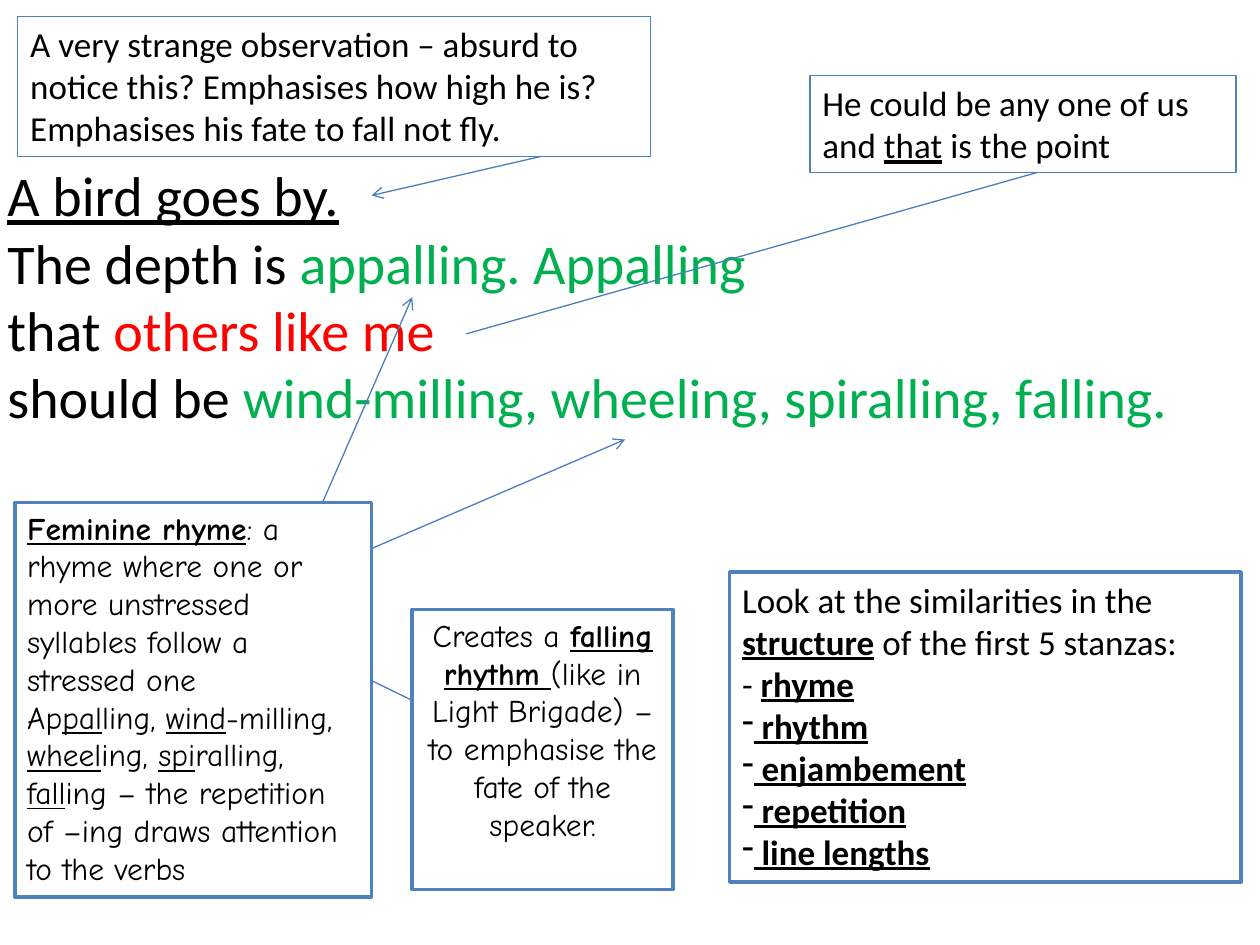
from lxml import etree
from pptx import Presentation
from pptx.dml.color import RGBColor
from pptx.enum.shapes import MSO_CONNECTOR, MSO_SHAPE
from pptx.enum.text import MSO_ANCHOR, PP_ALIGN
from pptx.oxml.ns import qn
from pptx.util import Cm, Pt

STRAIGHT = MSO_CONNECTOR.STRAIGHT
RECTANGLE = MSO_SHAPE.RECTANGLE
TOP = MSO_ANCHOR.TOP
LEFT, CENTER = PP_ALIGN.LEFT, PP_ALIGN.CENTER

BLACK = RGBColor(0x00, 0x00, 0x00)
WHITE = RGBColor(0xFF, 0xFF, 0xFF)
GREEN = RGBColor(0x00, 0xB0, 0x50)
RED = RGBColor(0xFF, 0x00, 0x00)
BORDER = RGBColor(0x4F, 0x81, 0xBD)
LEADER = RGBColor(0x4B, 0x7E, 0xBC)

PLAIN, UNDER, STRONG = "", "u", "bu"


def write(frame, paragraphs, font, size, align=LEFT):
    """Fill a text frame from lists of (text, style, optional colour) runs."""
    frame.word_wrap = True
    frame.vertical_anchor = TOP
    for index, runs in enumerate(paragraphs):
        para = frame.paragraphs[0] if index == 0 else frame.add_paragraph()
        para.alignment = align
        for text, style, *colour in runs:
            span = para.add_run()
            span.text = text
            span.font.name = font
            span.font.size = Pt(size)
            span.font.bold = "b" in style
            span.font.underline = "u" in style
            span.font.color.rgb = colour[0] if colour else BLACK


def add_dash(para):
    """Give a paragraph a dash as its bullet."""
    properties = para._p.get_or_add_pPr()
    properties.set("marL", "0")
    properties.set("indent", "0")
    etree.SubElement(properties, qn("a:buChar")).set("char", "-")


def add_leader(page, box, start, end, arrow=True):
    """Draw a leader line between two offsets from the corner of a box."""
    left, top = box[:2]
    line = page.shapes.add_connector(
        STRAIGHT, Cm(left + start[0]), Cm(top + start[1]),
        Cm(left + end[0]), Cm(top + end[1]))
    line.line.color.rgb = LEADER
    line.line.width = Pt(0.75)
    if arrow:
        tail = etree.SubElement(line.line._get_or_add_ln(), qn("a:tailEnd"))
        tail.set("type", "arrow")
    etree.SubElement(line._element.spPr, qn("a:effectLst"))


def add_note(page, box, paragraphs, font="Calibri", size=20, align=LEFT, heavy=False):
    """Add a bordered note, white with a thick border when heavy."""
    note = page.shapes.add_shape(RECTANGLE, *map(Cm, box))
    note.shadow.inherit = False
    if heavy:
        note.fill.solid()
        note.fill.fore_color.rgb = WHITE
    else:
        note.fill.background()
    note.line.color.rgb = BORDER
    note.line.width = Pt(2 if heavy else 0.75)
    write(note.text_frame, paragraphs, font, size, align)
    return note


def add_stanza(page, box):
    """Add the four lines of the poem."""
    stanza = page.shapes.add_textbox(*map(Cm, box))
    write(stanza.text_frame, [
        [("A bird goes by.", UNDER)],
        [("The depth is ", PLAIN), ("appalling. Appalling", PLAIN, GREEN)],
        [("that ", PLAIN), ("others like me", PLAIN, RED)],
        [("should be ", PLAIN),
         ("wind-milling, wheeling, spiralling, falling.", PLAIN, GREEN)],
    ], "Calibri", 32)


def add_bird_note(page, box):
    """Add the note on the bird with its arrow."""
    add_note(page, box, [[(
        "A very strange observation – absurd to notice this? Emphasises how "
        "high he is? Emphasises his fate to fall not fly.", PLAIN)]])
    add_leader(page, box, (10.56, 2.82), (7.13, 3.61))


def add_others_note(page, box):
    """Add the note on the speaker being anyone, with its line."""
    add_note(page, box, [[("He could be any one of us and ", PLAIN),
                          ("that", UNDER), (" is the point", PLAIN)]])
    add_leader(page, box, (4.57, 1.96), (-6.93, 5.21), arrow=False)


def add_structure_note(page, box):
    """Add the note listing the shared structure of the stanzas."""
    listed = [" rhythm", " enjambement", " repetition", " line lengths"]
    note = add_note(page, box, [
        [("Look at the similarities in the ", PLAIN), ("structure", STRONG),
         (" of the first 5 stanzas:", PLAIN)],
        [("- ", PLAIN), ("rhyme", STRONG)],
        *[[(feature, STRONG)] for feature in listed],
    ], heavy=True)
    for para in note.text_frame.paragraphs[-len(listed):]:
        add_dash(para)


def add_rhythm_note(page, box):
    """Add the note on the falling rhythm."""
    add_note(page, box, [[
        ("Creates a ", PLAIN), ("falling rhythm ", STRONG),
        ("(like in Light Brigade) – to emphasise the fate of the speaker.", PLAIN),
    ]], "Comic Neue", 18, CENTER, heavy=True)


def add_rhyme_note(page, box):
    """Add the note on feminine rhyme with its leaders behind it."""
    add_leader(page, box, (7.19, 3.59), (8.01, 3.99), arrow=False)
    add_leader(page, box, (5.59, 1.4), (8.01, -4.14))
    add_leader(page, box, (6.51, 1.22), (12.3, -1.27))
    examples = ["Ap", "pal", "ling, ", "wind", "-milling, ", "wheel", "ing, ",
                "spi", "ralling, ", "fall",
                "ing – the repetition of –ing draws attention to the verbs"]
    add_note(page, box, [
        [("Feminine rhyme", STRONG),
         (": a rhyme where one or more unstressed syllables follow a stressed one",
          PLAIN)],
        [(part, UNDER if index % 2 else PLAIN)
         for index, part in enumerate(examples)],
    ], "Comic Neue", 18, heavy=True)


def main():
    """Build the annotated stanza and save the deck."""
    deck = Presentation()
    deck.slide_width, deck.slide_height = Cm(25.4), Cm(19.05)
    page = deck.slides.add_slide(deck.slide_layouts[6])
    add_stanza(page, (-0.1, 3.12, 25.4, 5.74))
    add_others_note(page, (16.33, 1.52, 8.59, 1.96))
    add_structure_note(page, (14.71, 11.53, 10.31, 6.25))
    add_rhythm_note(page, (8.31, 12.29, 5.26, 5.64))
    add_rhyme_note(page, (0.3, 10.13, 7.19, 7.95))
    add_bird_note(page, (0.36, 0.33, 12.75, 2.82))
    deck.save("out.pptx")


if __name__ == "__main__":
    main()
